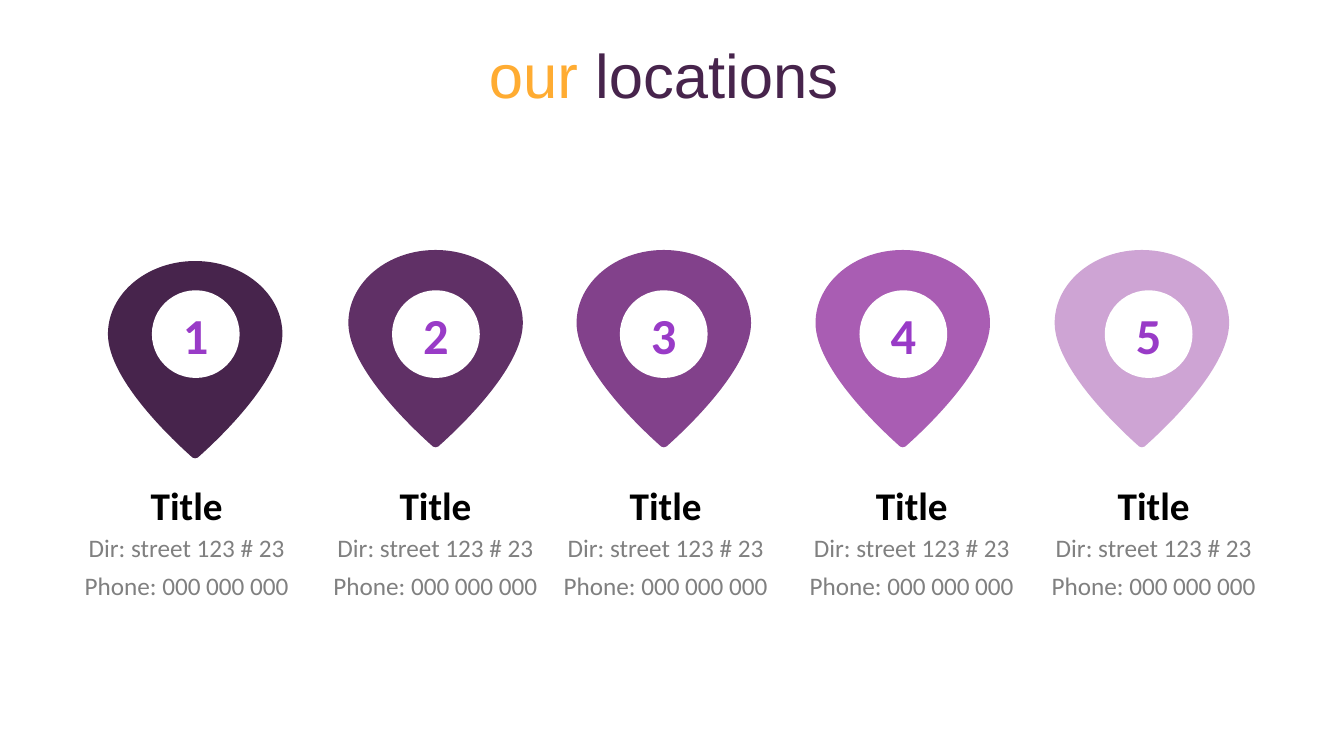
from dataclasses import dataclass

from pptx import Presentation
from pptx.dml.color import RGBColor
from pptx.enum.shapes import MSO_SHAPE as Shape
from pptx.enum.text import MSO_ANCHOR as Anchor, MSO_AUTO_SIZE as AutoSize, PP_ALIGN as Align
from pptx.oxml.ns import qn
from pptx.util import Inches, Pt

COLORS = {
    "amber": "FFAC32", "plum": "47244C", "violet": "993BC7",
    "black": "000000", "gray": "808080", "white": "FFFFFF",
    "grape": "603066", "purple": "82418B", "orchid": "A95DB3", "lilac": "CEA4D4",
}
WIDTH, HEIGHT = Inches(13.33), Inches(7.5)

# Lengths are percentages of the slide's width (x) and height (y)
PIN_SIZE = (12.98, 26.13)
DISC_SIZE, DISC_TOP = (6.53, 11.6), 38.4
HEADING_SIZE, HEADING_TOP = (9.98, 7.6), 63.07
DETAIL_SIZE, DETAIL_TOP = (16.88, 9.73), 70.67
DETAILS = "Dir: street 123 # 23\nPhone: 000 000 000"

# Pin outline in percentages of the pin's own box: a start,
# then two control points and an end for each curve
PIN_START = (100, 37)
PIN_CURVES = [
    (100, 60.5), (60.7, 92.3), (51.5, 99.5),
    (50.9, 100), (49.1, 100), (48.5, 99.5),
    (39.3, 92.3), (0, 60.5), (0, 37),
    (0, 16.5), (22.5, 0), (50, 0),
    (77.5, 0), (100, 16.5), (100, 37),
]


@dataclass
class Location:
    pin_left: float
    disc_left: float
    caption_center: float
    color: str
    pin_top: float = 33.07


LOCATIONS = [
    Location(8.03, 11.3, 13.89, "plum", pin_top=34.53),
    Location(25.92, 29.17, 32.4, "grape"),
    Location(42.9, 46.12, 49.53, "purple"),
    Location(60.68, 63.95, 67.84, "orchid"),
    Location(78.47, 82.2, 85.84, "lilac"),
]


def across(share: float) -> int:
    return round(WIDTH * share / 100)


def down(share: float) -> int:
    return round(HEIGHT * share / 100)


def frame(left: float, top: float, size: tuple) -> tuple:
    return across(left), down(top), across(size[0]), down(size[1])


def style_span(span, font: str, size: float, color: str, bold: bool = False) -> None:
    span.font.name = font
    span.font.size = Pt(size)
    span.font.bold = bold
    span.font.color.rgb = RGBColor.from_string(COLORS[color])


def fill_plain(shape, color: str) -> None:
    shape.shadow.inherit = False
    shape.fill.solid()
    shape.fill.fore_color.rgb = RGBColor.from_string(COLORS[color])
    shape.line.fill.background()


def write(box, text: str, size: float, color: str, bold: bool = False) -> None:
    text_frame = box.text_frame
    text_frame.word_wrap = True
    text_frame.margin_left = text_frame.margin_right = 0
    text_frame.text = text
    for para in text_frame.paragraphs:
        para.alignment = Align.CENTER
        for span in para.runs:
            style_span(span, "Calibri", size, color, bold)


def bend_lines(shape) -> None:
    """Turn every three line segments of a freeform into one Bezier curve."""
    lines = list(shape.element.iter(qn("a:lnTo")))
    for first, second, end in zip(lines[::3], lines[1::3], lines[2::3]):
        first.tag = qn("a:cubicBezTo")
        for line in (second, end):
            first.append(line[0])
            line.getparent().remove(line)


def draw_pin(page, location: Location, number: int) -> None:
    group = page.shapes.add_group_shape()
    left, top, width, height = frame(location.pin_left, location.pin_top, PIN_SIZE)
    corners = [
        (left + round(width * x / 100), top + round(height * y / 100))
        for x, y in (PIN_START, *PIN_CURVES)
    ]
    builder = group.shapes.build_freeform(*corners[0])
    builder.add_line_segments(corners[1:], close=True)
    pin = builder.convert_to_shape()
    bend_lines(pin)
    fill_plain(pin, location.color)

    disc = group.shapes.add_shape(Shape.OVAL, *frame(location.disc_left, DISC_TOP, DISC_SIZE))
    fill_plain(disc, "white")
    write(disc, str(number), 36, "violet", bold=True)
    disc.text_frame.vertical_anchor = Anchor.MIDDLE


def draw_caption(page, location: Location) -> None:
    group = page.shapes.add_group_shape()
    heading_left = location.caption_center - HEADING_SIZE[0] / 2
    heading = group.shapes.add_textbox(*frame(heading_left, HEADING_TOP, HEADING_SIZE))
    write(heading, "Title", 28, "black", bold=True)

    detail_left = location.caption_center - DETAIL_SIZE[0] / 2
    details = group.shapes.add_textbox(*frame(detail_left, DETAIL_TOP, DETAIL_SIZE))
    write(details, DETAILS, 18, "gray")
    for para in details.text_frame.paragraphs:
        para.line_spacing = Pt(17)
        para.space_before = Pt(10)


def draw_title(page) -> None:
    title = page.shapes.title
    title.left, title.top, title.width, title.height = frame(6.9, 5.33, (86.25, 19.33))
    title.text_frame.vertical_anchor = Anchor.TOP
    title.text_frame.auto_size = AutoSize.NONE
    para = title.text_frame.paragraphs[0]
    para.alignment = Align.CENTER
    para.line_spacing = 0.9
    for text, color in (("our ", "amber"), ("locations ", "plum")):
        span = para.add_run()
        span.text = text
        style_span(span, "Arial", 44, color)


def main() -> None:
    deck = Presentation()
    deck.slide_width, deck.slide_height = WIDTH, HEIGHT
    page = deck.slides.add_slide(deck.slide_layouts.get_by_name("Title Only"))
    draw_title(page)
    # Captions lie behind the pins
    for location in LOCATIONS:
        draw_caption(page, location)
    for number, location in enumerate(LOCATIONS, start=1):
        draw_pin(page, location, number)
    deck.save("out.pptx")


if __name__ == "__main__":
    main()
